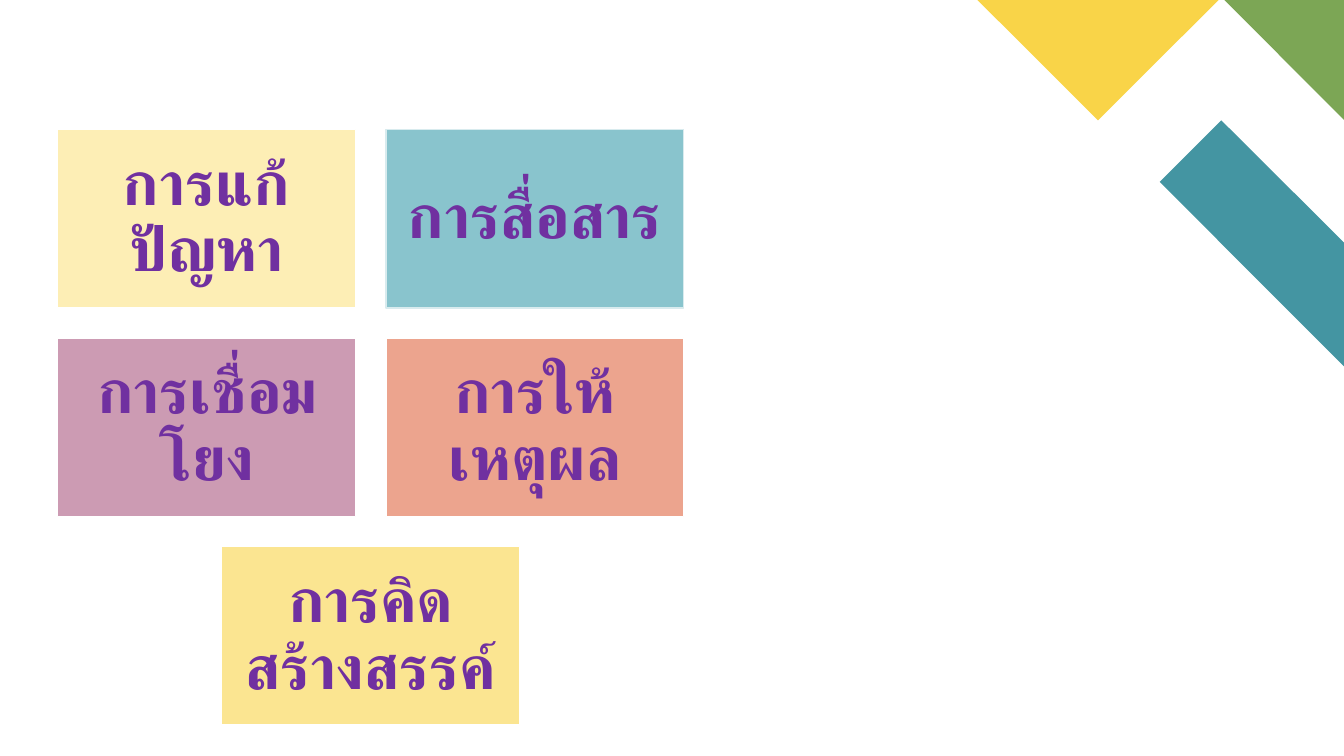
from dataclasses import dataclass

from pptx import Presentation
from pptx.dml.color import RGBColor
from pptx.enum.shapes import MSO_SHAPE
from pptx.enum.text import MSO_ANCHOR, PP_ALIGN
from pptx.oxml.ns import qn
from pptx.util import Pt

RECT = MSO_SHAPE.RECTANGLE
MIDDLE = MSO_ANCHOR.MIDDLE
CENTER = PP_ALIGN.CENTER


@dataclass(frozen=True)
class Theme:
    font: str = "Roboto"
    size: int = 44
    text: str = "7030A0"
    white: str = "FFFFFF"
    ice: str = "D8EBEE"
    cream: str = "FDEEB5"
    aqua: str = "89C4CD"
    mauve: str = "CC9BB3"
    salmon: str = "ECA48E"
    butter: str = "FBE591"
    teal: str = "4495A2"
    green: str = "7CA655"
    yellow: str = "F9D448"


THEME = Theme()

# Card grid, in points
LEFT, TOP = 41.2, 92.4
CARD_W, CARD_H = 212.8, 127.6
STEP_X, STEP_Y = 234.4, 149
INSET = 13

# Label, column, row, fill, outline; column 0.5 centres the last card
SKILLS = [
    ("การแก้ปัญหา", 0, 0, THEME.cream, THEME.white),
    ("การสื่อสาร", 1, 0, THEME.aqua, THEME.ice),
    ("การเชื่อมโยง", 0, 1, THEME.mauve, THEME.white),
    ("การให้เหตุผล", 1, 1, THEME.salmon, THEME.white),
    ("การคิดสร้างสรรค์", 0.5, 2, THEME.butter, THEME.white),
]

# Corner decoration: fill and outline points
CORNER = [
    (THEME.teal, [(960, 261.7), (960, 173.3), (872.4, 86), (828.4, 130)]),
    (THEME.green, [(960, 85.7), (960, 0), (874.6, 0)]),
    (THEME.yellow, [(698.2, 0), (784.3, 86), (870.5, 0)]),
]


def set_fill(sp, color):
    sp.shadow.inherit = False
    sp.fill.solid()
    sp.fill.fore_color.rgb = RGBColor.from_string(color)


def add_polygon(s, color, points):
    vertices = [(Pt(x), Pt(y)) for x, y in points]
    builder = s.shapes.build_freeform(*vertices[0])
    builder.add_line_segments(vertices[1:], close=True)
    sp = builder.convert_to_shape()
    set_fill(sp, color)
    sp.line.fill.background()


def add_card(s, label, col, row, fill, outline):
    sp = s.shapes.add_shape(RECT, Pt(LEFT + col * STEP_X), Pt(TOP + row * STEP_Y),
                            Pt(CARD_W), Pt(CARD_H))
    set_fill(sp, fill)
    sp.line.color.rgb = RGBColor.from_string(outline)
    sp.line.width = Pt(1)

    tf = sp.text_frame
    tf.text = label
    tf.word_wrap = True
    tf.vertical_anchor = MIDDLE
    tf.margin_left = tf.margin_right = tf.margin_top = tf.margin_bottom = Pt(INSET)
    p = tf.paragraphs[0]
    p.alignment = CENTER
    p.line_spacing = 0.9
    r = p.runs[0]
    r.font.name = THEME.font
    r.font.size = Pt(THEME.size)
    r.font.bold = True
    r.font.color.rgb = RGBColor.from_string(THEME.text)
    # Thai is set in the complex-script font
    cs = r.font._element.makeelement(qn("a:cs"), {"typeface": THEME.font})
    r.font._element.append(cs)


def main():
    prs = Presentation()
    prs.slide_width, prs.slide_height = Pt(960), Pt(540)
    s = prs.slides.add_slide(prs.slide_layouts[6])

    # Corner decoration
    for color, points in CORNER:
        add_polygon(s, color, points)

    # Skill cards
    for skill in SKILLS:
        add_card(s, *skill)

    prs.save("out.pptx")


if __name__ == "__main__":
    main()
